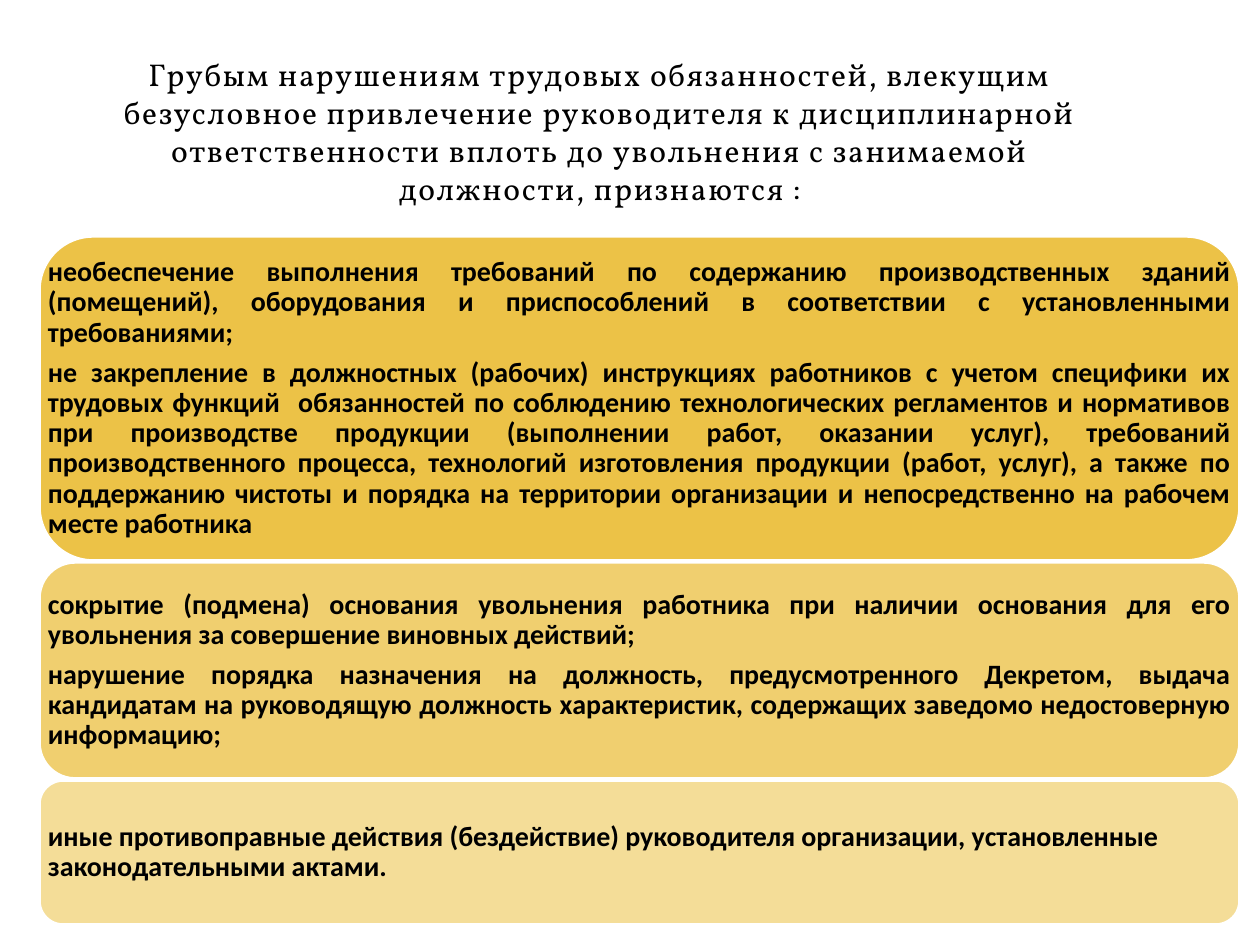
import pptx
import pptx.util
import pptx.dml.color
import pptx.enum.shapes
import pptx.enum.text
import pptx.oxml
import pptx.oxml.ns

EMU_PER_PX = 914400 / 126
COLORS = {"gold": "EABC33", "white": "FFFFFF", "halo": "FFFEFE", "text": "000000"}
ALIGN = pptx.enum.text.PP_ALIGN
ANCHOR = pptx.enum.text.MSO_ANCHOR

TITLE = (
    "Грубым нарушениям трудовых обязанностей, влекущим безусловное привлечение "
    "руководителя к дисциплинарной ответственности вплоть до увольнения с занимаемой "
    "должности, признаются :"
)
PANEL_LEFT, PANEL_TOP, PANEL_WIDTH, PANEL_GAP = 39, 236, 1201, 1
PANELS = [
    (325, 90, ALIGN.JUSTIFY, [
        "необеспечение выполнения требований по содержанию производственных зданий "
        "(помещений), оборудования и приспособлений в соответствии с установленными "
        "требованиями;",
        "не закрепление в должностных (рабочих) инструкциях работников с учетом специфики "
        "их трудовых функций  обязанностей по соблюдению технологических регламентов и "
        "нормативов при производстве продукции (выполнении работ, оказании услуг), "
        "требований производственного процесса, технологий изготовления продукции (работ, "
        "услуг), а также по поддержанию чистоты и порядка на территории организации и "
        "непосредственно на рабочем месте работника",
    ]),
    (217, 70, ALIGN.JUSTIFY, [
        "сокрытие (подмена) основания увольнения работника при наличии основания для его "
        "увольнения за совершение виновных действий;",
        "нарушение порядка назначения на должность, предусмотренного Декретом, выдача "
        "кандидатам на руководящую должность характеристик, содержащих заведомо "
        "недостоверную информацию;",
    ]),
    (145, 50, ALIGN.LEFT, [
        "иные противоправные действия (бездействие) руководителя организации, "
        "установленные законодательными актами.",
    ]),
]


def px(length):
    """Turn pixels into EMU."""
    return pptx.util.Emu(round(length * EMU_PER_PX))


def rgb(name):
    """Look up a named colour."""
    return pptx.dml.color.RGBColor.from_string(COLORS[name])


def apply(target, formats):
    """Set each attribute in formats on target."""
    for attribute, value in formats.items():
        setattr(target, attribute, value)


def style_font(font, name, size, bold):
    """Give a font its face, size, weight and text colour."""
    apply(font, {"name": name, "size": pptx.util.Pt(size), "bold": bold})
    font.color.rgb = rgb("text")


def add_title(slide):
    """Place the spaced, haloed heading in the title placeholder."""
    heading = slide.shapes.title
    apply(heading, {"left": px(88), "top": px(49), "width": px(1024), "height": px(129)})
    frame = heading.text_frame
    frame.text = TITLE
    apply(frame, {
        "word_wrap": True,
        "vertical_anchor": ANCHOR.TOP,
        "auto_size": pptx.enum.text.MSO_AUTO_SIZE.NONE,
    })
    paragraph = frame.paragraphs[0]
    paragraph.alignment = ALIGN.CENTER
    run = paragraph.runs[0]
    style_font(run.font, "Vollkorn", 18, False)
    properties = run._r.get_or_add_rPr()
    properties.set("spc", "100")
    properties.insert(0, pptx.oxml.parse_xml(
        f'<a:ln {pptx.oxml.ns.nsdecls("a")} w="{pptx.util.Pt(1.5)}"><a:solidFill>'
        f'<a:srgbClr val="{COLORS["halo"]}"/></a:solidFill></a:ln>'
    ))


def add_panel(slide, bounds, opacity):
    """Draw a translucent gold rounded panel."""
    panel = slide.shapes.add_shape(
        pptx.enum.shapes.MSO_SHAPE.ROUNDED_RECTANGLE, *bounds)
    panel.shadow.inherit = False
    panel.fill.solid()
    panel.fill.fore_color.rgb = rgb("gold")
    panel.line.color.rgb = rgb("white")
    panel.line.width = pptx.util.Pt(2)
    gold = panel._element.spPr.find(pptx.oxml.ns.qn("a:solidFill"))[0]
    gold.append(pptx.oxml.parse_xml(
        f'<a:alpha {pptx.oxml.ns.nsdecls("a")} val="{opacity * 1000}"/>'))


def add_violations(slide, bounds, alignment, violations):
    """Write the violations over a panel, one paragraph each."""
    frame = slide.shapes.add_textbox(*bounds).text_frame
    apply(frame, {"word_wrap": True, "vertical_anchor": ANCHOR.MIDDLE})
    apply(frame, {f"margin_{side}": px(9) for side in ("left", "top", "right", "bottom")})
    frame.text = "\n".join(violations)
    for paragraph in frame.paragraphs:
        apply(paragraph, {
            "alignment": alignment,
            "line_spacing": 0.9,
            "space_after": pptx.util.Pt(5.6),
        })
        style_font(paragraph.runs[0].font, "Calibri", 16, True)


def main():
    """Build and save the slide."""
    deck = pptx.Presentation()
    apply(deck, {"slide_width": px(1260), "slide_height": px(945)})
    slide = deck.slides.add_slide(deck.slide_layouts[5])
    add_title(slide)
    top = PANEL_TOP
    for height, opacity, alignment, violations in PANELS:
        bounds = [px(length) for length in (PANEL_LEFT, top, PANEL_WIDTH, height)]
        add_panel(slide, bounds, opacity)
        add_violations(slide, bounds, alignment, violations)
        top += height + PANEL_GAP
    deck.save("out.pptx")


if __name__ == "__main__":
    main()
